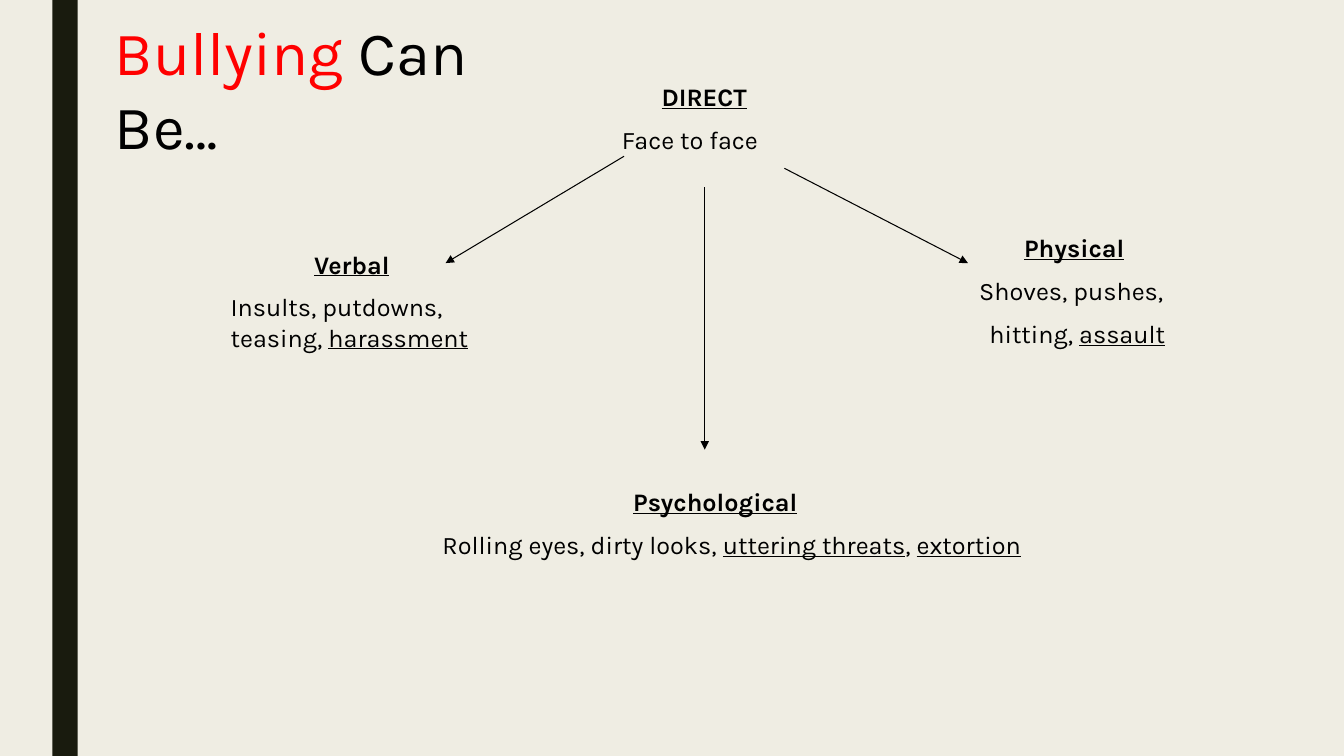
from pptx import Presentation
from pptx.dml.color import RGBColor
from pptx.enum.shapes import MSO_CONNECTOR, MSO_SHAPE
from pptx.enum.text import MSO_AUTO_SIZE, PP_ALIGN
from pptx.oxml.ns import qn
from pptx.util import Inches, Pt
from lxml import etree

STRAIGHT = MSO_CONNECTOR.STRAIGHT
RECTANGLE = MSO_SHAPE.RECTANGLE
FIT_SHAPE = MSO_AUTO_SIZE.SHAPE_TO_FIT_TEXT
LEFT, CENTER = PP_ALIGN.LEFT, PP_ALIGN.CENTER

CREAM = RGBColor(0xEF, 0xED, 0xE3)
DARK_OLIVE = RGBColor(0x19, 0x1B, 0x0E)
BLACK = RGBColor(0, 0, 0)
RED = RGBColor(0xFF, 0, 0)
FONT = "Karla"

TOPICS = [
    ("DIRECT", (3.65, 0.76, 6.67, 0.86), LEFT, 2.42,
     [[("Face to face", False)]]),
    ("Verbal", (2.19, 2.42, 2.6, 1.15), LEFT, 0,
     [[("Insults, putdowns, teasing, ", False), ("harassment", True)]]),
    ("Physical", (7.32, 2.26, 6.67, 1.31), CENTER, 0,
     [[("Shoves, pushes, ", False)],
      [(" hitting, ", False), ("assault", True)]]),
    ("Psychological", (3.76, 4.78, 6.67, 0.86), LEFT, 0.53,
     [[("Rolling eyes, dirty looks, ", False), ("uttering threats", True),
       (", ", False), ("extortion", True)]]),
]

ARROWS = [
    ((6.19, 1.55), (4.42, 2.61)),
    ((7.78, 1.67), (9.6, 2.61)),
    ((6.99, 1.86), (6.99, 4.46)),
]


def add_span(para, text, size=18, color=BLACK, bold=False, underline=False):
    """Add one formatted run of text to a paragraph."""
    span = para.add_run()
    span.text = text
    font = span.font
    font.name, font.size, font.color.rgb = FONT, Pt(size), color
    font.bold, font.underline = bold, underline


def add_text_frame(page, area):
    """Add a wrapping text box in the given area and return its frame."""
    box = page.shapes.add_textbox(*map(Inches, area))
    frame = box.text_frame
    frame.word_wrap = True
    frame.auto_size = FIT_SHAPE
    return frame


def add_title(page, area):
    """Place the two-coloured title."""
    para = add_text_frame(page, area).paragraphs[0]
    add_span(para, "Bullying", size=44, color=RED)
    add_span(para, " Can Be…", size=44)


def add_topic(page, area, heading, align, indent, lines):
    """Place an underlined heading with its lines of description below."""
    frame = add_text_frame(page, area)
    para = frame.paragraphs[0]
    para.alignment = CENTER
    add_span(para, heading, bold=True, underline=True)
    for line in lines:
        para = frame.add_paragraph()
        para.alignment = align
        para.space_before = Pt(9)
        if indent:
            para._p.get_or_add_pPr().set("marL", str(Inches(indent)))
        for text, underline in line:
            add_span(para, text, underline=underline)


def add_arrow(page, start, end):
    """Draw a thin black arrow from start to end."""
    arrow = page.shapes.add_connector(STRAIGHT, *map(Inches, start + end))
    arrow.line.color.rgb = BLACK
    arrow.line.width = Pt(0.75)
    etree.SubElement(arrow.line._get_or_add_ln(), qn("a:tailEnd"), type="triangle")
    etree.SubElement(arrow._element.spPr, qn("a:effectLst"))


def add_backdrop(page, area):
    """Fill the background and place the dark vertical stripe."""
    page.background.fill.solid()
    page.background.fill.fore_color.rgb = CREAM
    stripe = page.shapes.add_shape(RECTANGLE, *map(Inches, area))
    stripe.shadow.inherit = False
    stripe.fill.solid()
    stripe.fill.fore_color.rgb = DARK_OLIVE
    stripe.line.fill.background()


def main():
    """Build the slide and save the deck."""
    deck = Presentation()
    deck.slide_width, deck.slide_height = Inches(13.33), Inches(7.5)
    page = deck.slides.add_slide(deck.slide_layouts[6])
    add_backdrop(page, (0.52, 0, 0.25, 7.5))
    for heading, area, align, indent, lines in TOPICS:
        add_topic(page, area, heading, align, indent, lines)
    for start, end in ARROWS:
        add_arrow(page, start, end)
    add_title(page, (1.04, 0.09, 4.73, 0.84))
    deck.save("out.pptx")


if __name__ == "__main__":
    main()
